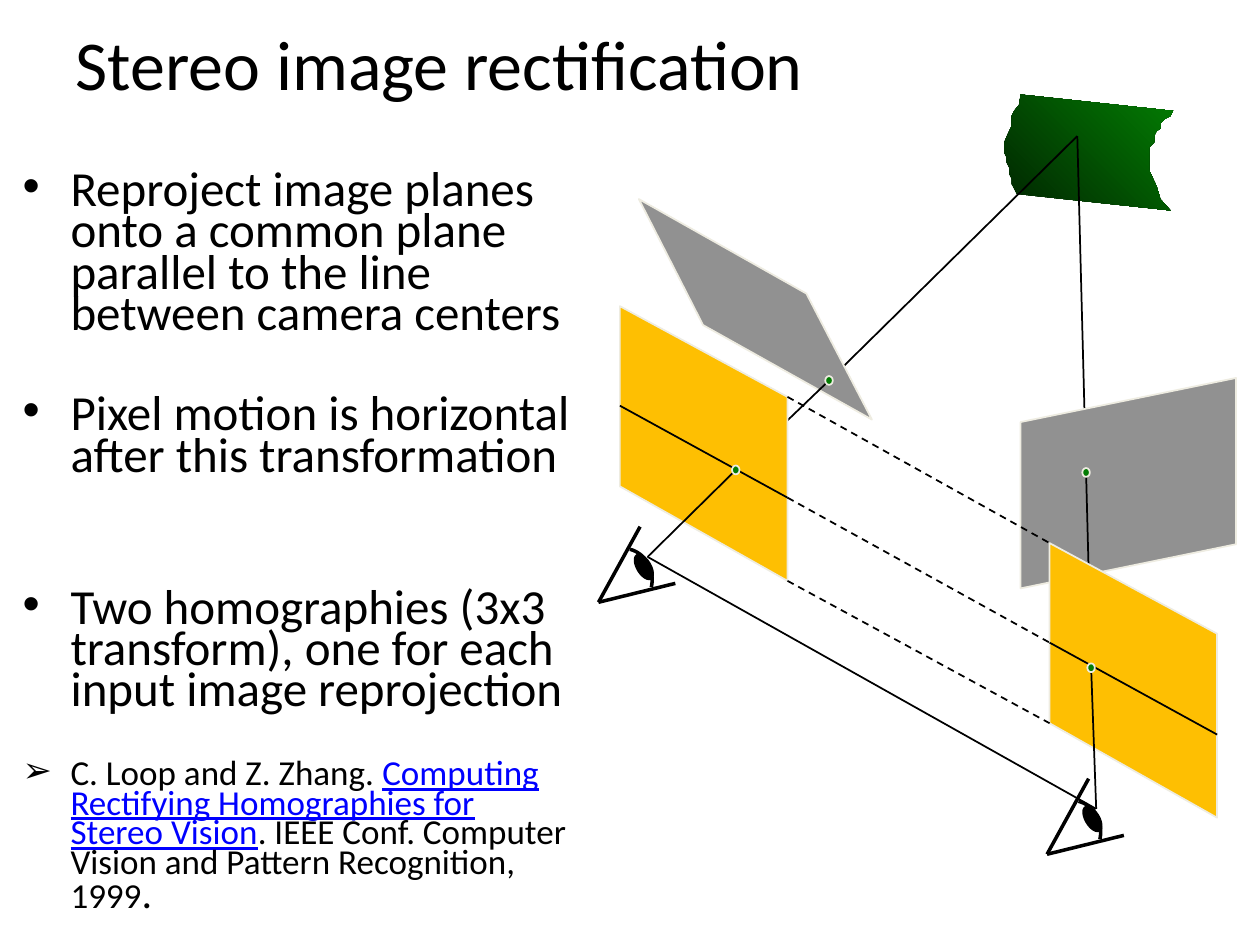
from dataclasses import dataclass

from lxml import etree
from pptx import Presentation
from pptx.dml.color import RGBColor
from pptx.enum import dml, shapes, text
from pptx.oxml.ns import qn
from pptx.util import Inches, Pt


@dataclass(frozen=True)
class Theme:
    font: str = "Calibri"
    ink: str = "000000"
    link: str = "0000FF"
    image: str = "919191"
    rectified: str = "FEBF02"
    edge: str = "EEECE1"
    green: str = "037C03"
    dark_green: str = "012501"
    title: int = 40
    body: int = 28
    cite: int = 20
    cite_end: int = 24
    thin: int = 1
    thick: int = 2


T = Theme()

SURFACE = [
    (0.13, 0), (0.12, 0.08), (0.08, 0.13), (0.06, 0.17), (0.06, 0.25), (0.04, 0.29),
    (0, 0.38), (0, 0.46), (0.02, 0.5), (0.02, 0.54), (0.04, 0.58), (0.04, 0.63),
    (0.06, 0.67), (0.06, 0.71), (0.1, 0.79), (1.32, 0.92), (1.24, 0.83), (1.21, 0.73),
    (1.15, 0.6), (1.15, 0.42), (1.19, 0.38), (1.19, 0.33), (1.21, 0.29), (1.24, 0.27),
    (1.24, 0.23), (1.28, 0.19), (1.32, 0.17), (1.34, 0.13),
]
RECTIFIED = [(0, 1.43), (1.33, 2.18), (1.33, 0.72), (0, 0)]
EPIPOLAR = [(0, 0.79), (1.33, 1.52)]
EYE_APEX = (0.39, -0.36)
SCENE_POINT = (3.8, 0.33)
VIEWS = [
    dict(eye=(0, 4.03), plane=(0.17, 1.68), image_dot=(1.83, 2.27), plane_dot=(1.09, 2.98),
         image=[(0.83, 1.83), (2.17, 2.58), (1.65, 1.58), (0.32, 0.83)]),
    dict(eye=(3.56, 6.03), plane=(3.58, 3.56), image_dot=(3.87, 3), plane_dot=(3.91, 4.55),
         image=[(3.35, 2.6), (3.35, 3.92), (5.06, 3.57), (5.06, 2.25)]),
]


def shift(origin, point):
    return origin[0] + point[0], origin[1] + point[1]


def color(value):
    return RGBColor.from_string(value)


def add_run(p, words, size=T.body, fill=T.ink, underline=False):
    r = p.add_run()
    r.text = words
    r.font.name, r.font.size, r.font.underline = T.font, Pt(size), underline
    r.font.color.rgb = color(fill)


def set_bullet(p, mark):
    """Hang the paragraph from a bullet mark."""
    pPr = p._p.get_or_add_pPr()
    pPr.set("marL", str(Inches(0.38)))
    pPr.set("indent", str(-Inches(0.38)))
    etree.SubElement(pPr, qn("a:buFont")).set("typeface", "Arial")
    etree.SubElement(pPr, qn("a:buChar")).set("char", mark)


def place(sp, left, top, width, height):
    sp.left, sp.top = Inches(left), Inches(top)
    sp.width, sp.height = Inches(width), Inches(height)


def style_line(sp, fill, width):
    sp.line.color.rgb = color(fill)
    sp.line.width = Pt(width)


def add_line(s, start, end, width=T.thin, dashed=False):
    ends = [Inches(v) for v in (*start, *end)]
    line = s.shapes.add_connector(shapes.MSO_CONNECTOR.STRAIGHT, *ends)
    style_line(line, T.ink, width)
    if dashed:
        line.line.dash_style = dml.MSO_LINE.DASH
    etree.SubElement(line._element.spPr, qn("a:effectLst"))


def add_outline(s, origin, points, close=True):
    pts = [tuple(Inches(v) for v in shift(origin, pt)) for pt in points]
    builder = s.shapes.build_freeform(*pts[0], scale=1.0)
    builder.add_line_segments(pts[1:], close=close)
    sp = builder.convert_to_shape()
    sp.shadow.inherit = False
    return sp


def add_plane(s, origin, points, fill):
    sp = add_outline(s, origin, points)
    sp.fill.solid()
    sp.fill.fore_color.rgb = color(fill)
    style_line(sp, T.edge, T.thin)


def add_ellipse(s, center, width, height, fill, edge, rotation=0):
    left, top = shift(center, (-width / 2, -height / 2))
    box = [Inches(v) for v in (left, top, width, height)]
    sp = s.shapes.add_shape(shapes.MSO_SHAPE.OVAL, *box)
    sp.shadow.inherit = False
    sp.rotation = rotation
    sp.fill.solid()
    sp.fill.fore_color.rgb = color(fill)
    style_line(sp, edge, T.thin)


def bezier(a, b, c, d, steps=16):
    """Points along a cubic curve."""
    points = []
    for i in range(steps + 1):
        t = i / steps
        weights = ((1 - t) ** 3, 3 * t * (1 - t) ** 2, 3 * t * t * (1 - t), t ** 3)
        points.append(tuple(sum(w * pt[k] for w, pt in zip(weights, (a, b, c, d)))
                            for k in (0, 1)))
    return points


def add_eye(s, corner):
    curve = bezier((0.25, -0.42), (0.37, -0.39), (0.45, -0.26), (0.42, -0.12))
    cornea = add_outline(s, corner, curve, close=False)
    cornea.fill.background()
    style_line(cornea, T.ink, T.thick)
    add_ellipse(s, shift(corner, (0.36, -0.28)), 0.11, 0.22, T.ink, T.ink, 329)
    for lid in ((0.33, -0.6), (0.61, -0.15)):
        add_line(s, corner, shift(corner, lid), T.thick)


def add_surface(s, origin):
    sp = add_outline(s, origin, SURFACE)
    sp.fill.gradient()
    sp.fill.gradient_angle = 45
    for stop, position, fill in zip(sp.fill.gradient_stops, (0, 1), (T.dark_green, T.green)):
        stop.position = position
        stop.color.rgb = color(fill)
    sp.line.fill.background()


def add_view(s, origin, eye, plane, image_dot, plane_dot, image):
    """One camera: its image, its rectified plane and the ray through both."""
    corner, base = shift(origin, eye), shift(origin, plane)
    dots = [shift(origin, dot) for dot in (image_dot, plane_dot)]
    add_line(s, shift(origin, SCENE_POINT), dots[0])
    add_plane(s, origin, image, T.image)
    add_line(s, *dots)
    add_plane(s, base, RECTIFIED, T.rectified)
    add_line(s, *(shift(base, pt) for pt in EPIPOLAR))
    add_line(s, dots[1], shift(corner, EYE_APEX))
    for dot in dots:
        add_ellipse(s, dot, 0.06, 0.07, T.green, T.edge)
    add_eye(s, corner)


def add_scene(s, left, top):
    origin = (left, top)
    add_surface(s, shift(origin, (3.22, 0)))
    add_line(s, *(shift(shift(origin, view["eye"]), EYE_APEX) for view in VIEWS))
    for view in VIEWS:
        add_view(s, origin, **view)
    first, second = (shift(origin, view["plane"]) for view in VIEWS)
    for start, end in ((RECTIFIED[2], RECTIFIED[3]), (EPIPOLAR[1], EPIPOLAR[0]),
                       (RECTIFIED[1], RECTIFIED[0])):
        add_line(s, shift(first, start), shift(second, end), dashed=True)


def fill_title(sp, *box):
    place(sp, *box)
    tf = sp.text_frame
    tf.vertical_anchor = text.MSO_ANCHOR.MIDDLE
    p = tf.paragraphs[0]
    p.alignment = text.PP_ALIGN.LEFT
    add_run(p, "Stereo image rectification", T.title)


def fill_body(sp, *box):
    place(sp, *box)
    tf = sp.text_frame
    tf.auto_size = text.MSO_AUTO_SIZE.NONE
    items = [
        (6, "•", [("Reproject image planes onto a common plane parallel to the line "
                   "between camera centers", {})]),
        (34, "•", [("Pixel motion is horizontal after this transformation", {})]),
        (63.5, "•", [("Two homographies (3x3 transform), one for each input image "
                      "reprojection", {})]),
        (27, "➢", [
            ("C. Loop and Z. Zhang. ", dict(size=T.cite)),
            ("Computing Rectifying Homographies for Stereo Vision",
             dict(size=T.cite, fill=T.link, underline=True)),
            (". IEEE Conf. Computer Vision and Pattern Recognition, 1999", dict(size=T.cite)),
            (".", dict(size=T.cite_end))]),
    ]
    for i, (gap, mark, runs) in enumerate(items):
        p = tf.add_paragraph() if i else tf.paragraphs[0]
        p.line_spacing, p.space_before = 0.7, Pt(gap)
        set_bullet(p, mark)
        for words, fmt in runs:
            add_run(p, words, **fmt)


def main():
    prs = Presentation()
    prs.slide_width, prs.slide_height = Inches(10), Inches(7.5)
    s = prs.slides.add_slide(prs.slide_layouts[1])
    fill_title(s.shapes.title, 0.5, 0, 9, 1)
    fill_body(s.placeholders[1], 0.08, 1.33, 4.58, 6.06)
    add_scene(s, 4.75, 0.75)
    prs.save("out.pptx")


if __name__ == "__main__":
    main()
